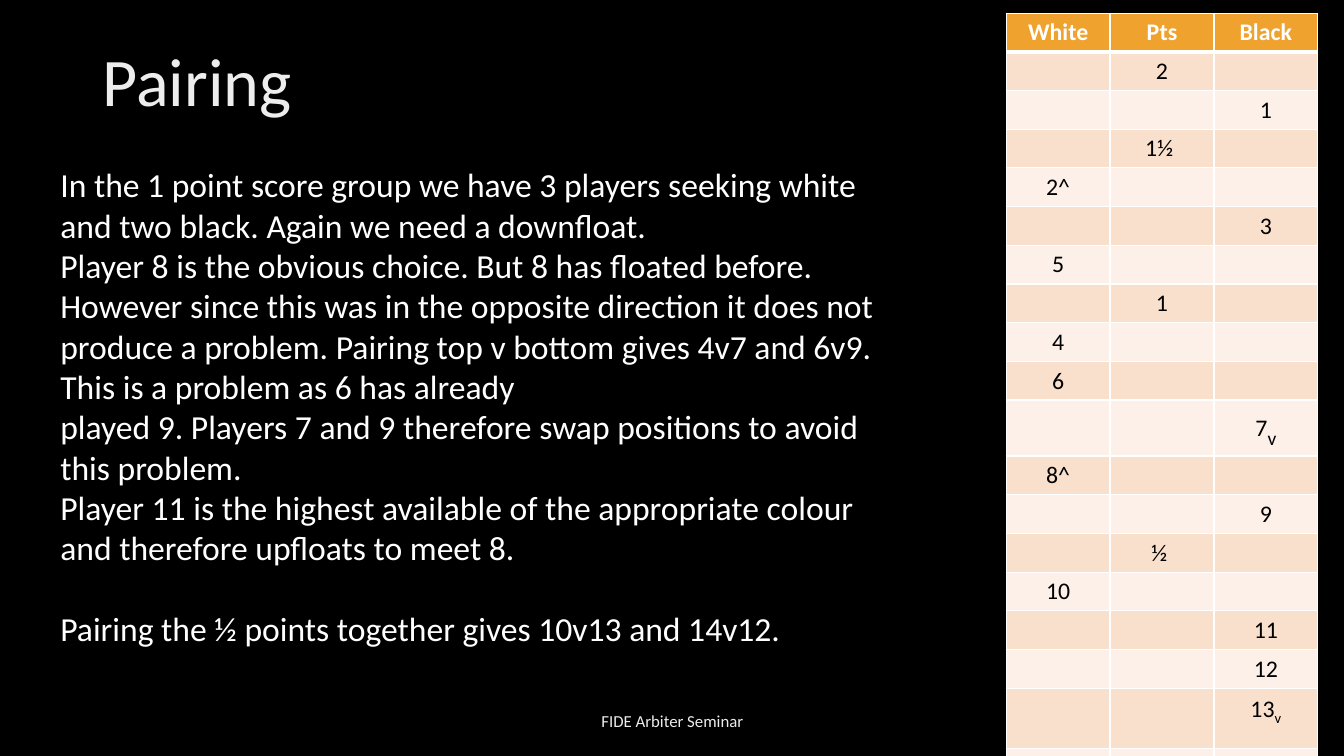
"""Build the chess pairing slide with its score group table."""
from lxml import etree
from pptx import Presentation
from pptx.dml.color import RGBColor
from pptx.enum.text import MSO_ANCHOR, PP_ALIGN
from pptx.oxml.ns import qn
from pptx.util import Inches, Pt

LEFT, CENTER = PP_ALIGN.LEFT, PP_ALIGN.CENTER
TOP, MIDDLE = MSO_ANCHOR.TOP, MSO_ANCHOR.MIDDLE
COLORS = {
    "background": "000000", "title": "EDEDED", "body": "FFFFFF",
    "header": "F0A22E", "odd": "F9E0CD", "even": "FCF0E8",
    "cell": "000000", "border": "FFFFFF",
}
WHITE, PTS, BLACK = range(3)
HEADINGS = ["White", "Pts", "Black"]
STANDINGS = [
    (PTS, "2"), (BLACK, "1"),
    (PTS, "1½ "), (WHITE, "2^"), (BLACK, "3"), (WHITE, "5"),
    (PTS, "1"), (WHITE, "4"), (WHITE, "6"), (BLACK, "7"), (WHITE, "8^"), (BLACK, "9"),
    (PTS, "½ "), (WHITE, "10"), (BLACK, "11"), (BLACK, "12"), (BLACK, "13"), (WHITE, "14"),
]
DOWNFLOAT_SIZES = {"7": 24, "13": 18}
COLUMN_WIDTH, ROW_HEIGHT, TALL_ROW = 1.03, 0.35, 0.6
EXPLANATION = [
    "In the 1 point score group we have 3 players seeking white and two black. "
    "Again we need a downfloat.",
    "Player 8 is the obvious choice. But 8 has floated before. However since this was in "
    "the opposite direction it does not produce a problem. Pairing top v bottom gives "
    "4v7 and 6v9. This is a problem as 6 has already",
    "played 9. Players 7 and 9 therefore swap positions to avoid this problem.",
    "Player 11 is the highest available of the appropriate colour and therefore "
    "upfloats to meet 8.",
    "Pairing the ½ points together gives 10v13 and 14v12.",
]


def write(paragraph, text, size, color, align=LEFT, bold=False, baseline=0):
    paragraph.alignment = align
    run = paragraph.add_run()
    run.text = text
    run.font.name = "Calibri"
    run.font.size = Pt(size)
    run.font.bold = bold
    run.font.color.rgb = RGBColor.from_string(COLORS[color])
    if baseline:
        run._r.get_or_add_rPr().set("baseline", str(baseline * 1000))


def add_frame(left, top, width, height, anchor):
    box = slide.shapes.add_textbox(Inches(left), Inches(top), Inches(width), Inches(height))
    box.text_frame.word_wrap = True
    box.text_frame.vertical_anchor = anchor
    return box.text_frame


prs = Presentation()
prs.slide_width, prs.slide_height = Inches(13.33), Inches(7.5)
slide = prs.slides.add_slide(prs.slide_layouts[6])
slide.background.fill.solid()
slide.background.fill.fore_color.rgb = RGBColor.from_string(COLORS["background"])

title = add_frame(0.92, 0.4, 11.5, 0.87, MIDDLE).paragraphs[0]
title.line_spacing = 0.9
write(title, "Pairing", 48.6, "title")

row_count = len(STANDINGS) + 1
pairings = slide.shapes.add_table(
    row_count, len(HEADINGS), Inches(9.98), Inches(0.13),
    Inches(COLUMN_WIDTH * len(HEADINGS)), Inches(ROW_HEIGHT * row_count)).table
for column in pairings.columns:
    column.width = Inches(COLUMN_WIDTH)

for r, row in enumerate(pairings.rows):
    row.height = Inches(ROW_HEIGHT)
    band = "header" if r == 0 else ("even", "odd")[r % 2]
    for c, cell in enumerate(row.cells):
        properties = cell._tc.get_or_add_tcPr()
        for side in ("lnL", "lnR", "lnT", "lnB"):
            heavy = (r == 0 and side == "lnB") or (r == 1 and side == "lnT")
            line = etree.SubElement(properties, qn(f"a:{side}"), w=str(Pt(3 if heavy else 1)))
            paint = etree.SubElement(line, qn("a:solidFill"))
            etree.SubElement(paint, qn("a:srgbClr"), val=COLORS["border"])
        cell.fill.solid()
        cell.fill.fore_color.rgb = RGBColor.from_string(COLORS[band])

        entry = cell.text_frame.paragraphs[0]
        if r == 0:
            write(entry, HEADINGS[c], 17, "body", CENTER, bold=True)
        elif STANDINGS[r - 1][0] == c:
            player = STANDINGS[r - 1][1]
            write(entry, player, 17, "cell", CENTER)
            if player in DOWNFLOAT_SIZES:
                write(entry, "v", DOWNFLOAT_SIZES[player], "cell", CENTER, baseline=-25)
            if player == "13":
                row.height = Inches(TALL_ROW)
        else:
            etree.SubElement(entry._p, qn("a:endParaRPr"), sz="1700")
            entry.alignment = CENTER
            etree.SubElement(entry._p.find(qn("a:endParaRPr")), qn("a:latin"), typeface="Calibri")

footer = add_frame(4.42, 6.95, 4.5, 0.4, MIDDLE).paragraphs[0]
write(footer, "FIDE Arbiter Seminar", 12, "title", CENTER)

explanation = add_frame(0.5, 1.58, 8.42, 4.95, TOP)
for i, sentence in enumerate(EXPLANATION):
    paragraph = explanation.add_paragraph() if i else explanation.paragraphs[0]
    write(paragraph, sentence, 24, "body")
paragraph.space_before = Pt(29)

prs.save("out.pptx")
